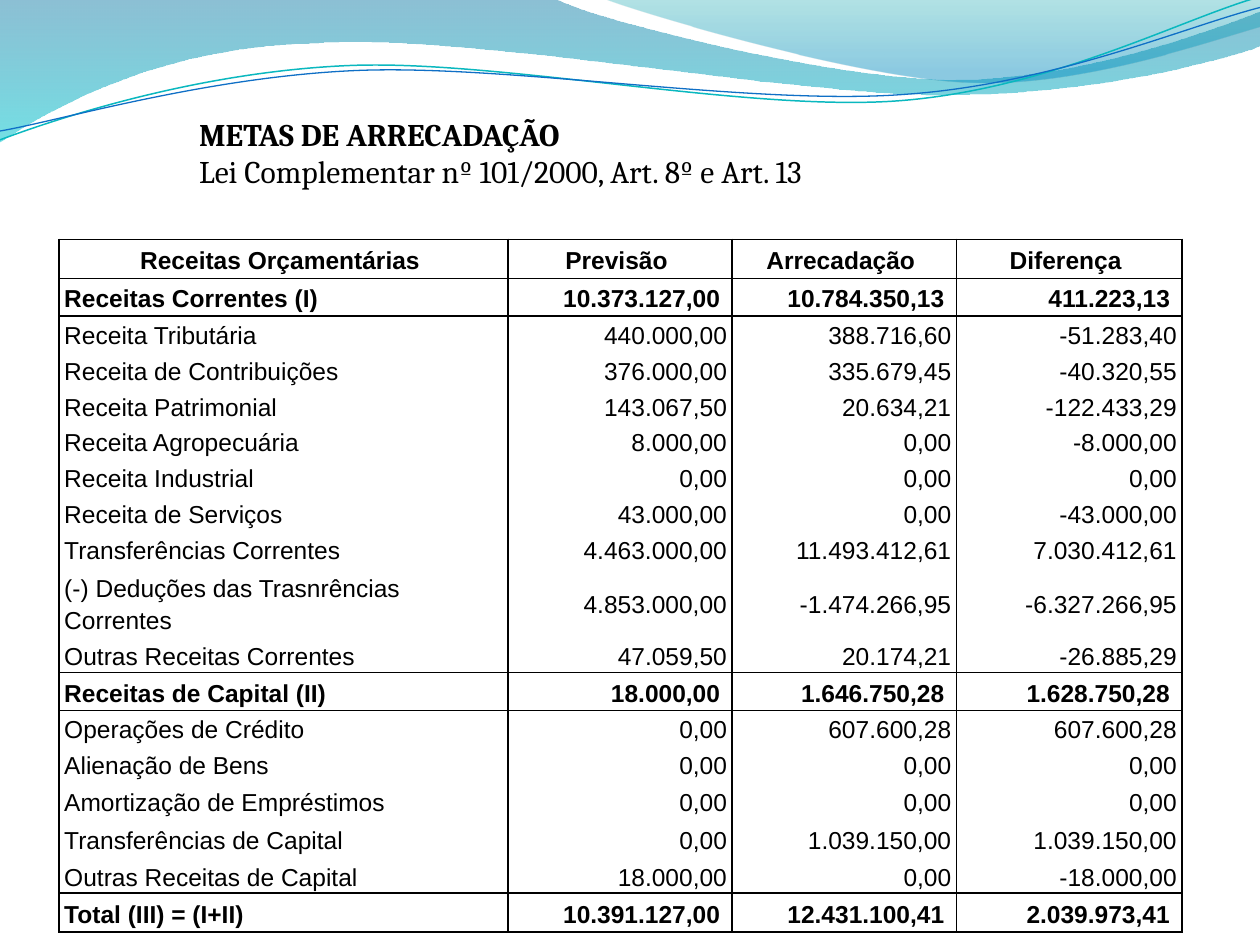
from math import cos, radians, sin

from lxml import etree
from pptx import Presentation
from pptx.dml.color import RGBColor as RGB
from pptx.enum.text import MSO_ANCHOR as Anchor, MSO_AUTO_SIZE as Fit, PP_ALIGN as Align
from pptx.oxml import parse_xml
from pptx.oxml.ns import nsdecls, qn
from pptx.util import Inches, Pt

HEX = {"ink": "000000", "blue": "0074A1", "aqua": "00C6CF", "teal": "00A1A9",
       "sky": "008BBF", "line1": "0AB8BF", "line2": "0F6FC6"}
TILT = 2.7

prs = Presentation()
prs.slide_width, prs.slide_height = Inches(10), Inches(7.5)
slide = prs.slides.add_slide(prs.slide_layouts[5])


def wave(start, parts, closed):
    """Draw an outline; a part is one point, or three that make a Bezier curve."""
    dots = [(Inches(x), Inches(y)) for part in parts for x, y in part]
    pen = slide.shapes.build_freeform(Inches(start[0]), Inches(start[1]))
    pen.add_line_segments(dots, close=closed)
    shape = pen.convert_to_shape()
    shape.shadow.inherit = False
    nodes = iter(list(shape.element.spPr.iter(qn("a:lnTo"))))
    for part in parts:
        node = next(nodes)
        if len(part) == 3:
            node.tag = qn("a:cubicBezTo")
            for _ in range(2):
                extra = next(nodes)
                node.append(extra[0])
                extra.getparent().remove(extra)
    return shape


def turn(spot, mid):
    """Turn a point clockwise about a centre by the tilt."""
    dx, dy = spot[0] - mid[0], spot[1] - mid[1]
    c, s = cos(radians(TILT)), sin(radians(TILT))
    return mid[0] + dx * c - dy * s, mid[1] + dx * s + dy * c


# Filled waves: start, parts, gradient stops (position, colour, opacity)
bands = [
    ((0, 0), [
        [(4.4, -0.01)],
        [(4.76, 0.17), (6.64, 0.63), (7.58, 0.63)],
        [(8.53, 0.63), (9.58, 0.26), (10, 0.09)],
        [(10.01, 0.36)],
        [(9.83, 0.44), (8.7, 0.76), (7.46, 0.75)],
        [(6.22, 0.75), (3.82, 0.28), (2.57, 0.34)],
        [(1.29, 0.36), (0.46, 0.83), (-0.01, 1.13)],
        [(0, 0)],
    ], [(0, "blue", 45), (1, "aqua", 55)]),
    ((4.79, -0.01), [
        [(5.09, 0.11), (6.82, 0.62), (7.69, 0.65)],
        [(8.56, 0.69), (9.61, 0.32), (10, 0.21)],
        [(10, 0)],
        [(4.79, -0.01)],
    ], [(0, "teal", 30), (0.8, "sky", 45)]),
]
for start, parts, stops in bands:
    band = wave(start, parts, True)
    band.line.fill.background()
    band.fill.gradient()
    band.fill.gradient_angle = 270
    for stop, (pos, name, alpha) in zip(band.fill.gradient_stops, stops):
        stop.position = pos
        stop.color.rgb = RGB.from_string(HEX[name])
    for node, (pos, name, alpha) in zip(band.element.spPr.iter(qn("a:srgbClr")), stops):
        etree.SubElement(node, qn("a:alpha")).set("val", str(alpha * 1000))

# Thin wave lines, tilted about their centres
curves = [
    ((4.99, 0.58), (0, 1.11), [
        [(0.48, 0.93), (1.58, 0.57), (2.77, 0.52)],
        [(3.95, 0.47), (5.93, 0.89), (7.13, 0.8)],
        [(8.33, 0.71), (9.38, 0.15), (9.98, -0.02)],
    ], "line1", 0.85),
    ((5, 0.59), (0, 1.04), [
        [(0.47, 0.96), (1.64, 0.61), (2.83, 0.56)],
        [(4.03, 0.51), (5.97, 0.84), (7.17, 0.75)],
        [(8.36, 0.67), (9.41, 0.21), (10, 0.06)],
    ], "line2", 0.75),
]
for mid, start, parts, name, width in curves:
    level = [[turn(spot, mid) for spot in part] for part in parts]
    curve = wave(turn(start, mid), level, False)
    curve.rotation = 360 - TILT
    curve.fill.background()
    curve.line.color.rgb = RGB.from_string(HEX[name])
    curve.line.width = Pt(width)

# Title
title = slide.shapes.title
title.left, title.top = Inches(1.48), Inches(0.86)
title.width, title.height = Inches(7.03), Inches(0.71)
frame = title.text_frame
frame.text = "METAS DE ARRECADAÇÃO\nLei Complementar nº 101/2000, Art. 8º e Art. 13"
frame.auto_size = Fit.NONE
frame.vertical_anchor = Anchor.TOP
for row, para in enumerate(frame.paragraphs):
    para.alignment = Align.LEFT
    font = para.runs[0].font
    font.name, font.size, font.bold = "Cambria", Pt(18), row == 0
    font.color.rgb = RGB.from_string(HEX["ink"])

# Table rows: height, bold, cells
data = [
    (0.31, True, "Receitas Orçamentárias ", "Previsão ", "Arrecadação ", "Diferença "),
    (0.3, True, "Receitas Correntes (I)", "10.373.127,00 ", "10.784.350,13 ", "411.223,13 "),
    (0.28, False, "Receita Tributária", "440.000,00", "388.716,60", "-51.283,40"),
    (0.29, False, "Receita de Contribuições", "376.000,00", "335.679,45", "-40.320,55"),
    (0.28, False, "Receita Patrimonial", "143.067,50", "20.634,21", "-122.433,29"),
    (0.28, False, "Receita Agropecuária", "8.000,00", "0,00", "-8.000,00"),
    (0.29, False, "Receita Industrial", "0,00", "0,00", "0,00"),
    (0.28, False, "Receita de Serviços", "43.000,00", "0,00", "-43.000,00"),
    (0.3, False, "Transferências Correntes", "4.463.000,00", "11.493.412,61", "7.030.412,61"),
    (0.55, False, "(-) Deduções das Trasnrências Correntes",
     "4.853.000,00", "-1.474.266,95", "-6.327.266,95"),
    (0.28, False, "Outras Receitas Correntes", "47.059,50", "20.174,21", "-26.885,29"),
    (0.3, True, "Receitas de Capital (II)", "18.000,00 ", "1.646.750,28 ", "1.628.750,28 "),
    (0.28, False, "Operações de Crédito", "0,00", "607.600,28", "607.600,28"),
    (0.29, False, "Alienação de Bens", "0,00", "0,00", "0,00"),
    (0.3, False, "Amortização de Empréstimos", "0,00", "0,00", "0,00"),
    (0.3, False, "Transferências de Capital", "0,00", "1.039.150,00", "1.039.150,00"),
    (0.28, False, "Outras Receitas de Capital", "18.000,00", "0,00", "-18.000,00"),
    (0.31, True, "Total (III) = (I+II)", "10.391.127,00 ", "12.431.100,41 ", "2.039.973,41 "),
]
rows = [(0.27, False, "", "", "", "")] + data
holder = slide.shapes.add_table(len(rows), 4, Inches(0.47), Inches(1.63), Inches(8.91), Inches(5.79))
table = holder.table
table.first_row = table.horz_banding = False
table._tbl.tblPr.find(qn("a:tableStyleId")).text = "{2D5ABB26-0587-4C30-8999-92F81FD0307C}"
for col, width in zip(table.columns, (3.56, 1.78, 1.78, 1.79)):
    col.width = Inches(width)

for r, (height, bold, *texts) in enumerate(rows):
    table.rows[r].height = Inches(height)
    sides = "B" if r == 0 else "LRTB" if bold else "LR"
    for c, text in enumerate(texts):
        cell = table.cell(r, c)
        cell.margin_left = cell.margin_right = Inches(0.04)
        cell.margin_top = cell.margin_bottom = Inches(0.01)
        cell.vertical_anchor = Anchor.MIDDLE
        for side in sides:
            cell._tc.get_or_add_tcPr().append(parse_xml(
                f'<a:ln{side} {nsdecls("a")} w="12700"><a:solidFill>'
                f'<a:srgbClr val="{HEX["ink"]}"/></a:solidFill></a:ln{side}>'))
        cell.fill.background()
        para = cell.text_frame.paragraphs[0]
        if r == 0:
            etree.SubElement(para._p, qn("a:endParaRPr")).set("sz", "1200")
            continue
        para.text = text
        para.line_spacing = 1.15
        para.alignment = Align.CENTER if r == 1 else Align.RIGHT if c else Align.LEFT
        font = para.runs[0].font
        font.name, font.size, font.bold = "Arial", Pt(14), bold
        font.color.rgb = RGB.from_string(HEX["ink"])

# The empty top row has two merged pairs
for c in (0, 2):
    table.cell(0, c).merge(table.cell(0, c + 1))

prs.save("out.pptx")
